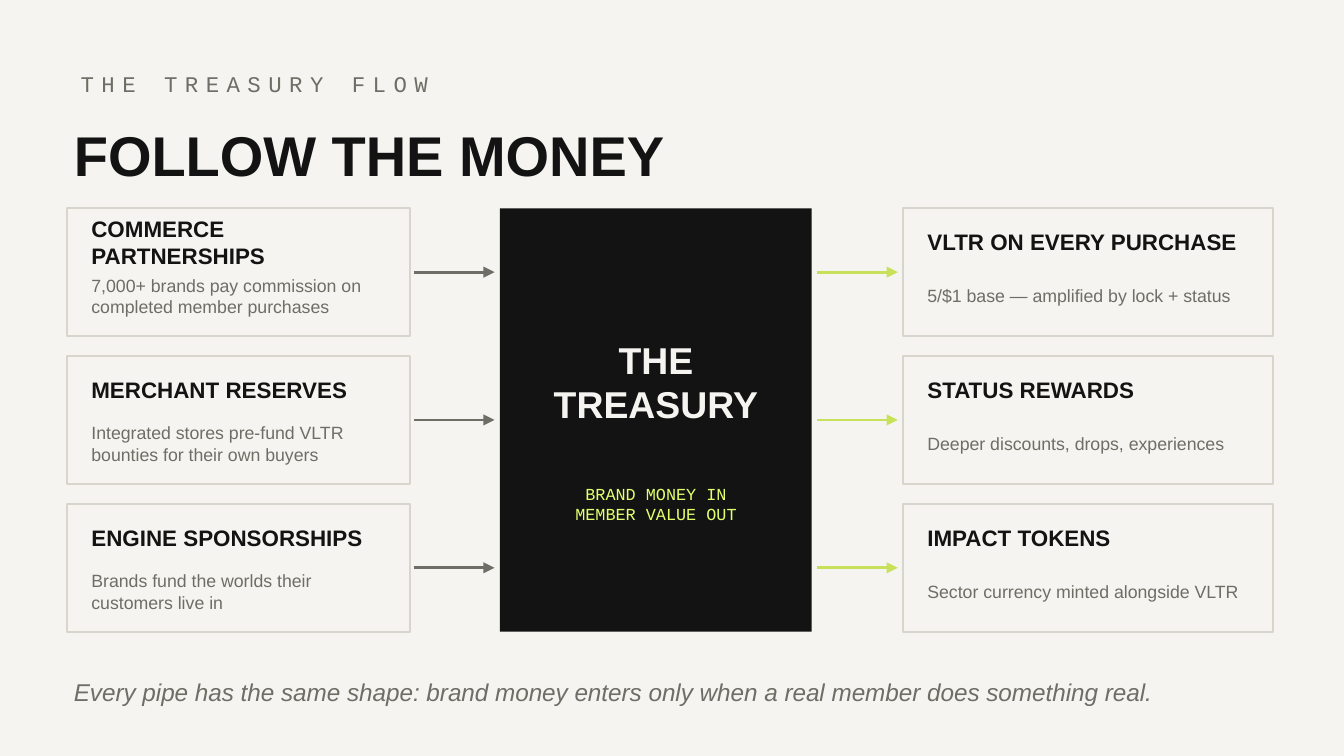
from dataclasses import dataclass

from lxml import etree
from pptx import Presentation
from pptx.dml.color import RGBColor
from pptx.enum.shapes import MSO_CONNECTOR, MSO_SHAPE
from pptx.enum.text import MSO_ANCHOR, MSO_AUTO_SIZE, PP_ALIGN
from pptx.oxml.ns import qn
from pptx.util import Pt

RECT = MSO_SHAPE.RECTANGLE
STRAIGHT = MSO_CONNECTOR.STRAIGHT
MIDDLE = MSO_ANCHOR.MIDDLE
NO_FIT = MSO_AUTO_SIZE.NONE
LEFT, CENTER = PP_ALIGN.LEFT, PP_ALIGN.CENTER


@dataclass(frozen=True)
class Theme:
    paper: str = "F5F4F0"
    ink: str = "131313"
    muted: str = "6E6E66"
    border: str = "D8D6CC"
    lime: str = "C7E25A"
    bright_lime: str = "E2FF6D"
    sans: str = "Arial"
    mono: str = "Courier New"
    title: float = 30
    hub: float = 20
    closing: float = 13
    heading: float = 12
    body: float = 9.5
    caption: float = 9


class FlowSlide:
    """Draws the elements of a flow diagram on one slide in a given theme."""

    def __init__(self, prs, theme):
        self.theme = theme
        self.slide = prs.slides.add_slide(prs.slide_layouts[5])
        fill = self.slide.background.fill
        fill.solid()
        fill.fore_color.rgb = RGBColor.from_string(theme.paper)

    def set_text(self, sp, lines, size, color, font=None, bold=False, italic=False,
                 align=LEFT, line_spacing=None, tracking=None):
        tf = sp.text_frame
        tf.word_wrap = True
        tf.auto_size = NO_FIT
        tf.vertical_anchor = MIDDLE
        tf.margin_left = tf.margin_top = tf.margin_right = tf.margin_bottom = 0
        for i, line in enumerate(lines):
            p = tf.add_paragraph() if i else tf.paragraphs[0]
            r = p.add_run()
            r.text = line
            if tracking:
                r._r.get_or_add_rPr().set("spc", str(tracking * 100))
            p.alignment = align
            if line_spacing:
                p.line_spacing = line_spacing
            p.font.name = font or self.theme.sans
            p.font.size = Pt(size)
            p.font.bold = bold
            p.font.italic = italic
            p.font.color.rgb = RGBColor.from_string(color)

    def title(self, x, y, w, h, text):
        sp = self.slide.shapes.title
        sp.left, sp.top, sp.width, sp.height = Pt(x), Pt(y), Pt(w), Pt(h)
        self.set_text(sp, [text], self.theme.title, self.theme.ink, bold=True)

    def text(self, x, y, w, h, lines, size, color, **style):
        sp = self.slide.shapes.add_textbox(Pt(x), Pt(y), Pt(w), Pt(h))
        self.set_text(sp, lines, size, color, **style)

    def rect(self, x, y, w, h, fill, border=None):
        sp = self.slide.shapes.add_shape(RECT, Pt(x), Pt(y), Pt(w), Pt(h))
        sp.shadow.inherit = False
        sp.fill.solid()
        sp.fill.fore_color.rgb = RGBColor.from_string(fill)
        if border:
            sp.line.color.rgb = RGBColor.from_string(border)
            sp.line.width = Pt(1)
        else:
            sp.line.fill.background()

    def card(self, x, y, w, h, text_w, heading, body):
        t = self.theme
        self.rect(x, y, w, h, t.paper, t.border)
        self.text(x + 12.96, y + 7.2, text_w, 21.6, [heading], t.heading, t.ink, bold=True)
        self.text(x + 12.96, y + 28.8, text_w, 36, [body], t.body, t.muted)

    def arrow(self, x, y, length, color):
        sp = self.slide.shapes.add_connector(STRAIGHT, Pt(x), Pt(y), Pt(x + length), Pt(y))
        sp.line.color.rgb = RGBColor.from_string(color)
        sp.line.width = Pt(1.5)
        ln = sp._element.spPr.find(qn("a:ln"))
        etree.SubElement(ln, qn("a:tailEnd"), type="triangle")
        etree.SubElement(sp._element.spPr, qn("a:effectLst"))


INFLOWS = [
    ("COMMERCE PARTNERSHIPS", "7,000+ brands pay commission on completed member purchases"),
    ("MERCHANT RESERVES", "Integrated stores pre-fund VLTR bounties for their own buyers"),
    ("ENGINE SPONSORSHIPS", "Brands fund the worlds their customers live in"),
]
OUTFLOWS = [
    ("VLTR ON EVERY PURCHASE", "5/$1 base — amplified by lock + status"),
    ("STATUS REWARDS", "Deeper discounts, drops, experiences"),
    ("IMPACT TOKENS", "Sector currency minted alongside VLTR"),
]
TOP, CARD_H, ROW_STEP = 111.6, 68.4, 79.2
HUB_X, HUB_W = 267.84, 167.04
ARROW_W = 43.2


def main():
    prs = Presentation()
    prs.slide_width, prs.slide_height = Pt(720), Pt(405)
    t = Theme()
    s = FlowSlide(prs, t)

    s.text(43.2, 32.4, 633.6, 25.2, ["THE TREASURY FLOW"], t.heading, t.muted,
           font=t.mono, tracking=4)
    s.title(39.6, 61.2, 640.8, 43.2, "FOLLOW THE MONEY")

    s.rect(HUB_X, TOP, HUB_W, 2 * ROW_STEP + CARD_H, t.ink)
    s.text(HUB_X, 169.2, HUB_W, 72, ["THE", "TREASURY"], t.hub, t.paper,
           bold=True, align=CENTER, line_spacing=0.98)
    s.text(HUB_X, 248.4, HUB_W, 43.2, ["BRAND MONEY IN", "MEMBER VALUE OUT"],
           t.caption, t.bright_lime, font=t.mono, align=CENTER)

    columns = [
        (INFLOWS, 36, 183.6, 162, 221.76, t.muted),
        (OUTFLOWS, 483.84, 198, 176.4, 437.76, t.lime),
    ]
    for flows, x, w, text_w, arrow_x, color in columns:
        for row, (heading, body) in enumerate(flows):
            y = TOP + row * ROW_STEP
            s.card(x, y, w, CARD_H, text_w, heading, body)
            s.arrow(arrow_x, y + CARD_H / 2, ARROW_W, color)

    s.text(39.6, 356.4, 640.8, 28.8,
           ["Every pipe has the same shape: brand money enters only when "
            "a real member does something real."],
           t.closing, t.muted, italic=True)
    prs.save("out.pptx")


if __name__ == "__main__":
    main()
